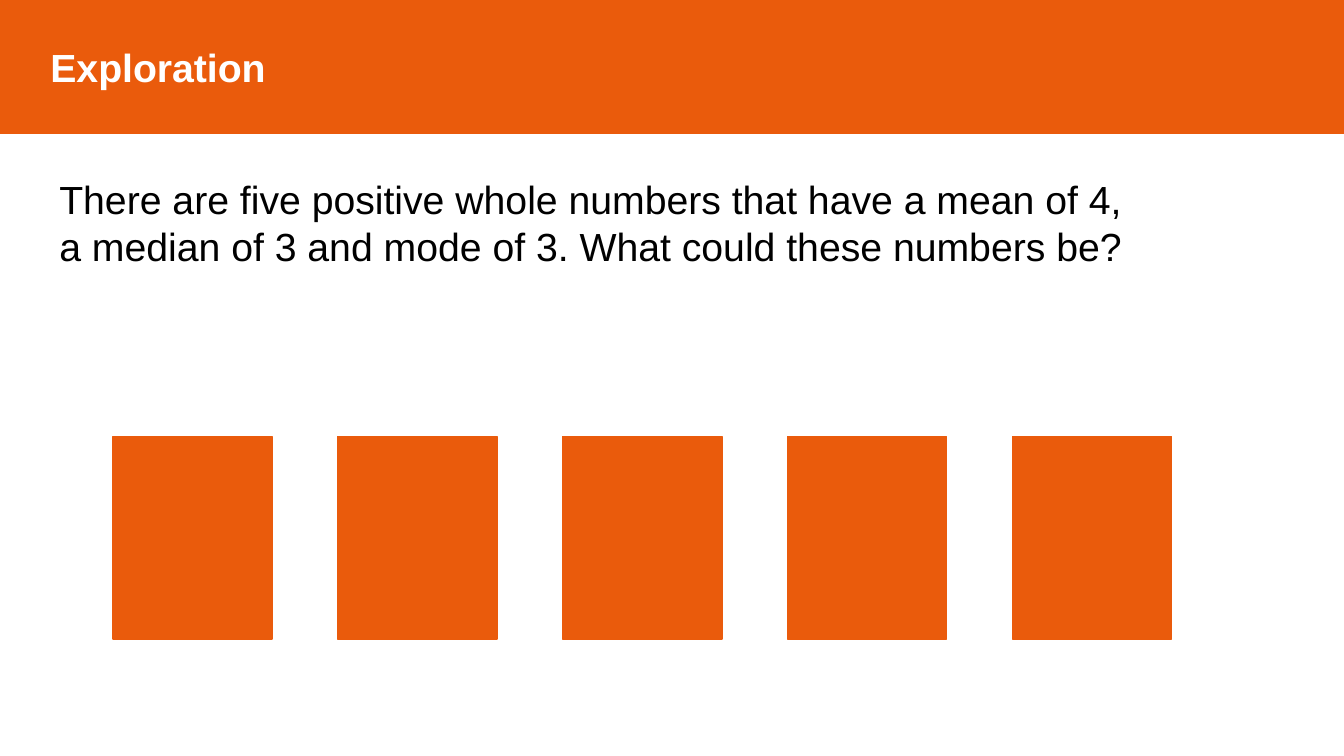
from pptx import Presentation
from pptx import util as u
from pptx.dml.color import RGBColor
from pptx.enum import shapes, text

PX = 9144  # EMU per px, 100 px to the inch
ORANGE = RGBColor(0xEA, 0x5B, 0x0C)
WHITE = RGBColor(0xFF, 0xFF, 0xFF)
BLACK = RGBColor(0x00, 0x00, 0x00)

SLIDE_WIDTH, SLIDE_HEIGHT = 1333, 750
CARD_COUNT, CARD_LEFT, CARD_PITCH = 5, 112, 223
QUESTION = (
    "There are five positive whole numbers that have a mean of 4,",
    "a median of 3 and mode of 3. What could these numbers be?",
)


def px(*lengths):
    return [u.Emu(length * PX) for length in lengths]


def set_all(target, values):
    for name, value in values.items():
        setattr(target, name, value)


def write_lines(frame, lines, color, bold=False):
    """Fill a text frame with one left-aligned paragraph per line."""
    for number, line in enumerate(lines):
        paragraph = frame.add_paragraph() if number else frame.paragraphs[0]
        paragraph.alignment = text.PP_ALIGN.LEFT
        run = paragraph.add_run()
        run.text = line
        set_all(run.font, {"name": "Arial", "size": u.Pt(28), "bold": bold})
        run.font.color.rgb = color


def add_block(slide, left, top, width, height):
    """Add a solid orange rectangle."""
    block = slide.shapes.add_shape(
        shapes.MSO_SHAPE.RECTANGLE, *px(left, top, width, height))
    block.shadow.inherit = False
    block.fill.solid()
    block.fill.fore_color.rgb = ORANGE
    block.line.color.rgb = ORANGE
    block.line.width = u.Pt(1)
    return block


def add_header(slide, title):
    header = add_block(slide, 0, 0, SLIDE_WIDTH, 132)
    set_all(header.text_frame, {
        "margin_left": px(50)[0],
        "vertical_anchor": text.MSO_ANCHOR.MIDDLE,
        "word_wrap": True,
    })
    write_lines(header.text_frame, [title], WHITE, bold=True)


def add_question(slide, lines):
    question = slide.shapes.add_textbox(*px(49, 169, 1260, 165))
    question.text_frame.word_wrap = True
    write_lines(question.text_frame, lines, BLACK)


def add_number_cards(slide):
    for number in range(CARD_COUNT):
        add_block(slide, CARD_LEFT + number * CARD_PITCH, 433, 158, 201)


def main():
    deck = Presentation()
    deck.slide_width, deck.slide_height = px(SLIDE_WIDTH, SLIDE_HEIGHT)
    slide = deck.slides.add_slide(deck.slide_layouts[6])

    # Title band
    add_header(slide, "Exploration")
    # Problem statement
    add_question(slide, QUESTION)
    # One blank card for each unknown number
    add_number_cards(slide)

    deck.save("out.pptx")


if __name__ == "__main__":
    main()
